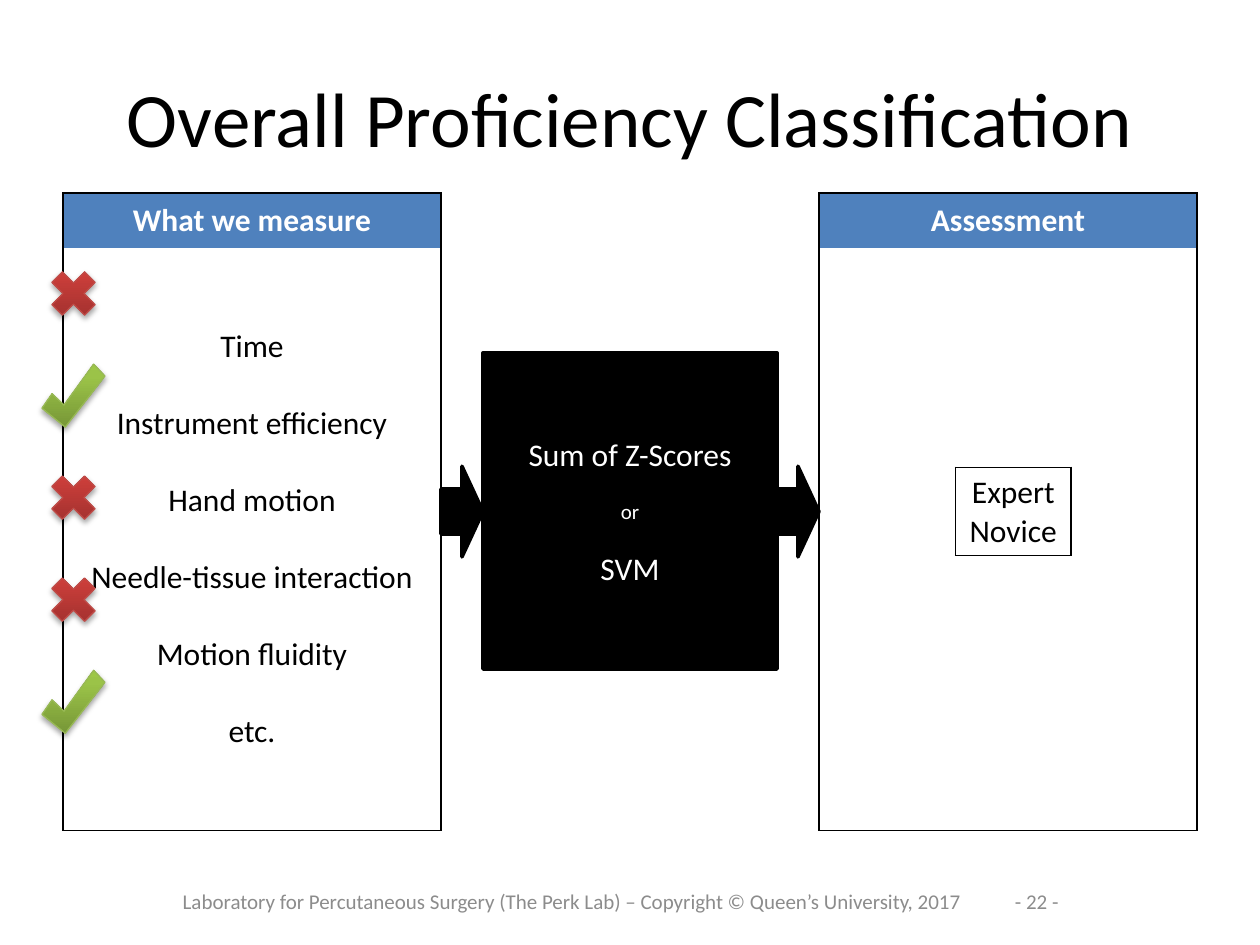
from copy import deepcopy
from dataclasses import dataclass

from pptx import Presentation
from pptx.dml.color import RGBColor
from pptx.enum.shapes import MSO_SHAPE
from pptx.enum.text import MSO_ANCHOR, PP_ALIGN
from pptx.oxml import parse_xml
from pptx.oxml.ns import nsdecls
from pptx.util import Inches, Pt

RECT, ARROW, CROSS = MSO_SHAPE.RECTANGLE, MSO_SHAPE.RIGHT_ARROW, MSO_SHAPE.MATH_MULTIPLY
CENTER, RIGHT = PP_ALIGN.CENTER, PP_ALIGN.RIGHT
TOP, MIDDLE = MSO_ANCHOR.TOP, MSO_ANCHOR.MIDDLE
FONT = "Calibri"
UNIT = Inches(1) / 6
COLORS = {"black": "000000", "white": "FFFFFF", "blue": "4F81BD", "grey": "8C8C8C"}
CHECK_POINTS = [(16, 47), (35, 65), (82, 0), (100, 19), (37, 100), (0, 70)]
MARK_SIZE, MARK_TOP, MARK_STEP = 3, 12.48, 4.86


@dataclass
class Box:
    col: float
    row: float
    cols: float
    rows: float

    def emu(self) -> list[int]:
        return [grid(v) for v in (self.col, self.row, self.cols, self.rows)]


@dataclass
class Line:
    text: str
    size: float = 18
    color: str = "black"
    bold: bool = False
    before: float = 0


@dataclass
class Cell:
    lines: list[Line]
    borders: str
    fill: str = ""
    anchor: MSO_ANCHOR = MIDDLE


@dataclass
class Mark:
    stops: list[str]
    line: str


CROSS_MARK = Mark(["9C2F2D", "CB3E3A", "CE3B37"], "BF4C48")
CHECK_MARK = Mark(["779737", "9BC348", "9DC746"], "98B955")


def grid(n: float) -> int:
    return round(n * UNIT)


def rgb(name: str) -> RGBColor:
    return RGBColor.from_string(COLORS[name])


def write(tf, lines: list[Line], align=CENTER) -> None:
    for i, line in enumerate(lines):
        p = tf.add_paragraph() if i else tf.paragraphs[0]
        p.alignment = align
        if line.before:
            p.space_before = Pt(line.before)
        r = p.add_run()
        r.text = line.text
        r.font.name = FONT
        r.font.size = Pt(line.size)
        r.font.bold = line.bold
        r.font.color.rgb = rgb(line.color)


def add_text(slide, box: Box, line: Line, align=CENTER) -> None:
    tf = slide.shapes.add_textbox(*box.emu()).text_frame
    tf.word_wrap = True
    tf.vertical_anchor = MIDDLE
    write(tf, [line], align)


def set_borders(cell, sides: str) -> None:
    tc_pr = cell._tc.get_or_add_tcPr()
    for i, side in enumerate("LRTB"):
        paint = (f'<a:solidFill><a:srgbClr val="{COLORS["black"]}"/></a:solidFill>'
                 if side in sides else "<a:noFill/>")
        tc_pr.insert(i, parse_xml(
            f'<a:ln{side} {nsdecls("a")} w="{Pt(1)}">{paint}</a:ln{side}>'))


def add_table(slide, box: Box, heights: list[float], rows: list[list[Cell]]) -> None:
    table = slide.shapes.add_table(len(rows), len(rows[0]), *box.emu()).table
    table.first_row = table.horz_banding = False
    for r, cells in enumerate(rows):
        table.rows[r].height = grid(heights[r])
        for c, item in enumerate(cells):
            cell = table.cell(r, c)
            if item.fill:
                cell.fill.solid()
                cell.fill.fore_color.rgb = rgb(item.fill)
            else:
                cell.fill.background()
            cell.vertical_anchor = item.anchor
            set_borders(cell, item.borders)
            write(cell.text_frame, item.lines)


def add_black_shape(slide, kind, box: Box, lines: list[Line]) -> None:
    sp = slide.shapes.add_shape(kind, *box.emu())
    sp.shadow.inherit = False
    sp.fill.solid()
    sp.fill.fore_color.rgb = rgb("black")
    sp.line.color.rgb = rgb("black")
    sp.line.width = Pt(2)
    sp.text_frame.vertical_anchor = MIDDLE
    write(sp.text_frame, lines)


def add_mark(slide, mark: Mark, box: Box) -> None:
    left, top, width, height = box.emu()
    if mark is CROSS_MARK:
        sp = slide.shapes.add_shape(CROSS, left, top, width, height)
    else:
        builder = slide.shapes.build_freeform(*CHECK_POINTS[0], scale=width / 100)
        builder.add_line_segments(CHECK_POINTS[1:], close=True)
        sp = builder.convert_to_shape(left, top)
    sp.fill.gradient()
    sp.fill.gradient_angle = 90
    stop_list = sp._element.xpath(".//a:gsLst")[0]
    stop_list.append(deepcopy(stop_list[-1]))
    for stop, color, position in zip(sp.fill.gradient_stops, mark.stops, (0, 0.8, 1)):
        stop.color.rgb = RGBColor.from_string(color)
        stop.position = position
    sp.line.color.rgb = RGBColor.from_string(mark.line)
    sp.line.width = Pt(0.75)
    sp.shadow.inherit = False
    sp._element.xpath(".//a:effectLst")[0].append(parse_xml(
        f'<a:outerShdw {nsdecls("a")} blurRad="{Pt(3.1)}" dist="{Pt(1.8)}" dir="5400000" '
        f'rotWithShape="0"><a:srgbClr val="{COLORS["black"]}"><a:alpha val="35000"/>'
        '</a:srgbClr></a:outerShdw>'))


def header(text: str) -> Cell:
    return Cell([Line(text, color="white", bold=True)], "LRT", "blue")


def main() -> None:
    prs = Presentation()
    prs.slide_width, prs.slide_height = Inches(10), Inches(7.5)
    slide = prs.slides.add_slide(prs.slide_layouts[6])

    add_text(slide, Box(3, 1.8, 54, 7.5), Line("Overall Proficiency Classification", 44))
    add_text(slide, Box(7.5, 41.7, 39.5, 2.4), Line(
        "Laboratory for Percutaneous Surgery (The Perk Lab) – "
        "Copyright © Queen’s University, 2017", 12, "grey"))
    add_text(slide, Box(47.5, 41.7, 3.5, 2.4), Line("- 22 -", 12, "grey"), RIGHT)

    measures = ["Time", "Instrument efficiency", "Hand motion",
                "Needle-tissue interaction", "Motion fluidity", "etc."]
    measure_lines = [Line(m, before=22 if i else 0) for i, m in enumerate(measures)]
    add_table(slide, Box(3, 9.18, 54, 30.36), [2.64, 27.72], [
        [header("What we measure"), Cell([], "LR", "white"), header("Assessment")],
        [Cell(measure_lines, "LRB"), Cell([], "LR"), Cell([], "LRB")],
    ])
    add_table(slide, Box(45.5, 22.26, 5.5, 4.2), [4.2],
              [[Cell([Line("Expert"), Line("Novice")], "LRTB", anchor=TOP)]])

    add_black_shape(slide, RECT, Box(23, 16.8, 14, 15.06), [
        Line("Sum of Z-Scores", color="white"),
        Line("or", 12, "white", before=14.65),
        Line("SVM", color="white", before=14.65),
    ])
    for col in (21, 37):
        add_black_shape(slide, ARROW, Box(col, 22.2, 2, 4.32), [])

    marks = [CROSS_MARK, CHECK_MARK, CROSS_MARK, CROSS_MARK, CHECK_MARK]
    for i, mark in enumerate(marks):
        add_mark(slide, mark, Box(2, MARK_TOP + i * MARK_STEP, MARK_SIZE, MARK_SIZE))

    prs.save("out.pptx")


if __name__ == "__main__":
    main()
